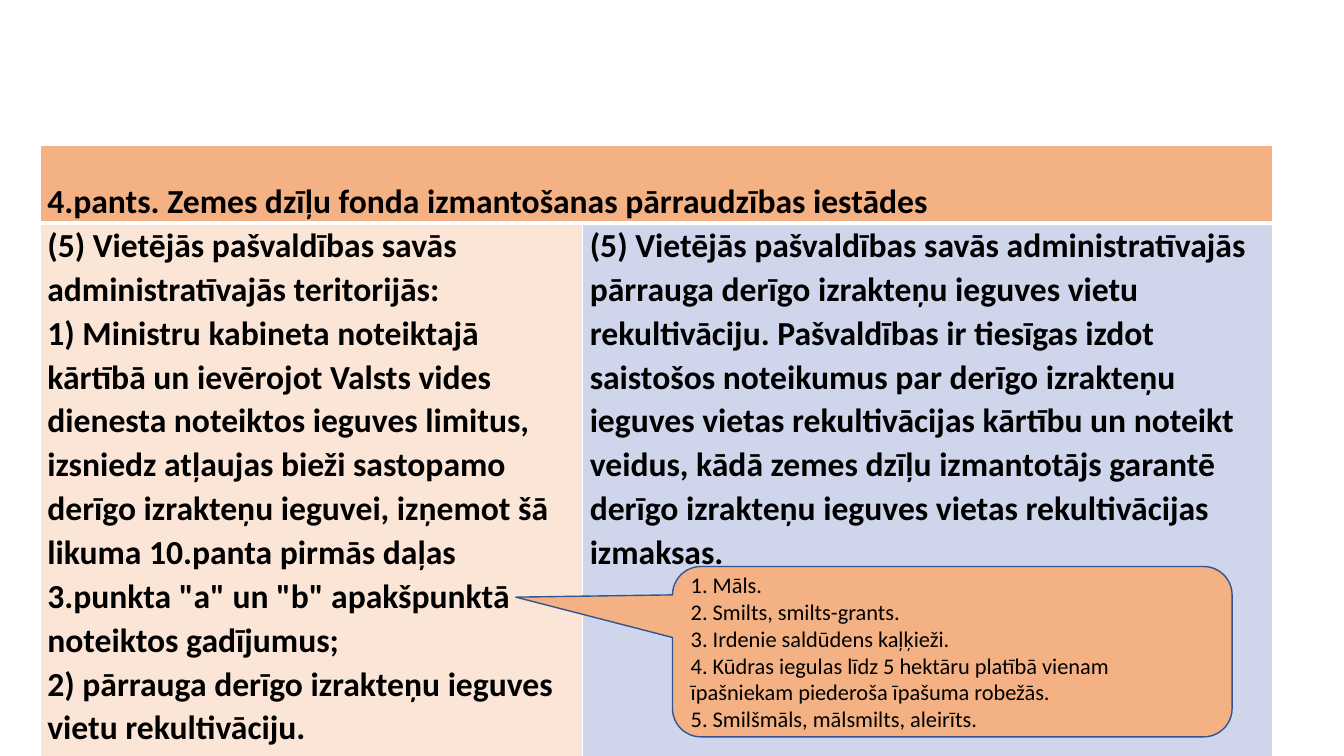
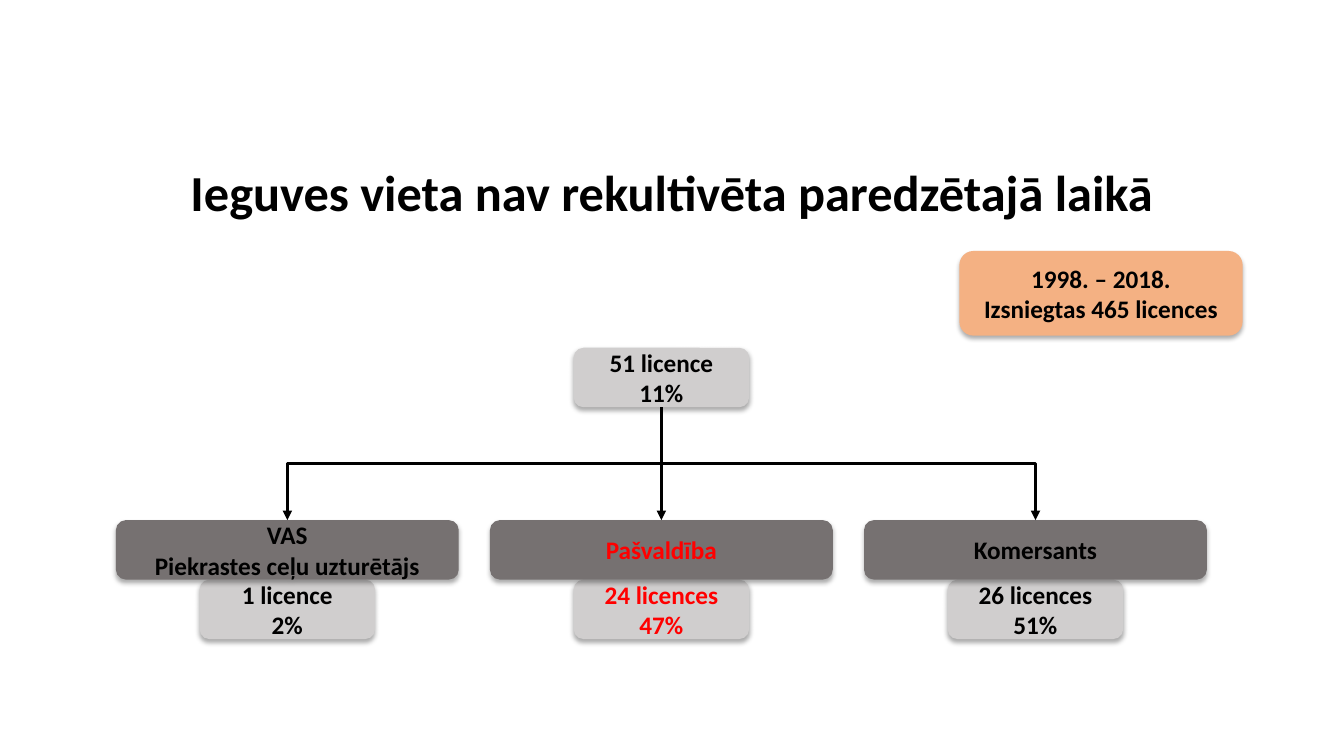
from lxml import etree
from pptx import Presentation
from pptx.dml.color import RGBColor
from pptx.enum.shapes import MSO_CONNECTOR as Link, MSO_SHAPE as Preset
from pptx.enum.text import MSO_ANCHOR as Anchor, PP_ALIGN as Align
from pptx.oxml.ns import qn
from pptx.util import Inches, Pt

FONT = "Calibri"
BLACK = RGBColor(0x00, 0x00, 0x00)
WHITE = RGBColor(0xFF, 0xFF, 0xFF)
RED = RGBColor(0xFF, 0x00, 0x00)
ORANGE = RGBColor(0xF4, 0xB1, 0x83)
PALE_ORANGE = RGBColor(0xFB, 0xE5, 0xD6)
PALE_BLUE = RGBColor(0xCF, 0xD5, 0xEA)
NAVY = RGBColor(0x32, 0x54, 0x91)
LIGHT_GRAY = RGBColor(0xD0, 0xCE, 0xCE)
DARK_GRAY = RGBColor(0x76, 0x71, 0x71)

ARTICLE = ["4.pants. Zemes dzīļu fonda izmantošanas pārraudzības iestādes"]
CURRENT_TEXT = [
    "(5) Vietējās pašvaldības savās administratīvajās teritorijās:",
    "1) Ministru kabineta noteiktajā kārtībā un ievērojot Valsts vides dienesta "
    "noteiktos ieguves limitus, izsniedz atļaujas bieži sastopamo derīgo izrakteņu "
    "ieguvei, izņemot šā likuma 10.panta pirmās daļas 3.punkta \"a\" un \"b\" "
    "apakšpunktā noteiktos gadījumus;",
    "2) pārrauga derīgo izrakteņu ieguves vietu rekultivāciju.",
]
NEW_TEXT = [
    "(5) Vietējās pašvaldības savās administratīvajās pārrauga derīgo izrakteņu "
    "ieguves vietu rekultivāciju. Pašvaldības ir tiesīgas izdot saistošos noteikumus "
    "par derīgo izrakteņu ieguves vietas rekultivācijas kārtību un noteikt veidus, "
    "kādā zemes dzīļu izmantotājs garantē derīgo izrakteņu ieguves vietas "
    "rekultivācijas izmaksas.",
]
MINERALS = [
    "1. Māls.",
    "2. Smilts, smilts-grants.",
    "3. Irdenie saldūdens kaļķieži.",
    "4. Kūdras iegulas līdz 5 hektāru platībā vienam īpašniekam piederoša īpašuma robežās.",
    "5. Smilšmāls, mālsmilts, aleirīts.",
]
COLUMN_WIDTHS = [5.38, 6.84]
ROW_HEIGHTS = [0.77, 9.81]

TITLE = ["Ieguves vieta nav rekultivēta paredzētajā laikā"]
ISSUED = ["1998. – 2018.", "Izsniegtas 465 licences"]
OVERDUE = ["51 licence", "11%"]
HOLDERS = [
    (["VAS", "Piekrastes ceļu uzturētājs"], ["1 licence", "2%"], BLACK),
    (["Pašvaldība"], ["24 licences", "47%"], RED),
    (["Komersants"], ["26 licences", "51%"], BLACK),
]
FIRST_CENTER, HOLDER_PITCH = 2.85, 3.71
HOLDER_WIDTH, COUNT_WIDTH, BOX_HEIGHT = 3.4, 1.74, 0.59
OVERDUE_TOP, HOLDER_TOP = 3.45, 5.16


def write(frame, lines, size, color=BLACK, bold=True, align=Align.LEFT, spacing=None):
    frame.word_wrap = True
    for i, line in enumerate(lines):
        paragraph = frame.paragraphs[0] if i == 0 else frame.add_paragraph()
        paragraph.alignment = align
        if spacing:
            paragraph.line_spacing = spacing
        run = paragraph.add_run()
        run.text = line
        font = run.font
        font.name, font.size, font.bold = FONT, Pt(size), bold
        font.color.rgb = color


def fill_cell(cell, lines, color, top=1, bottom=1, anchor=Anchor.TOP):
    cell.margin_left = cell.margin_right = Inches(0.07)
    cell.margin_top = cell.margin_bottom = 0
    cell.vertical_anchor = anchor
    properties = cell._tc.get_or_add_tcPr()
    for side, width in (("lnL", 1), ("lnR", 1), ("lnT", top), ("lnB", bottom)):
        border = etree.SubElement(properties, qn(f"a:{side}"), w=str(Pt(width)))
        solid = etree.SubElement(border, qn("a:solidFill"))
        etree.SubElement(solid, qn("a:srgbClr"), val=str(WHITE))
    cell.fill.solid()
    cell.fill.fore_color.rgb = color
    write(cell.text_frame, lines, 24, spacing=1.07)


def add_filled(slide, preset, left, top, width, height, color):
    shape = slide.shapes.add_shape(
        preset, Inches(left), Inches(top), Inches(width), Inches(height))
    shape.shadow.inherit = False
    shape.fill.solid()
    shape.fill.fore_color.rgb = color
    shape.text_frame.vertical_anchor = Anchor.MIDDLE
    return shape


def add_box(slide, center, top, width, height, color, lines, text_color=BLACK):
    """Rounded box with a soft shadow, centred on a given x."""
    box = add_filled(slide, Preset.ROUNDED_RECTANGLE,
                     center - width / 2, top, width, height, color)
    box.line.fill.background()
    effects = box._element.spPr.find(qn("a:effectLst"))
    shadow = etree.SubElement(
        effects, qn("a:outerShdw"), blurRad=str(Pt(3.5)), dist=str(Pt(2.2)),
        dir="5400000", algn="t", rotWithShape="0")
    shade = etree.SubElement(shadow, qn("a:srgbClr"), val=str(BLACK))
    etree.SubElement(shade, qn("a:alpha"), val="32000")
    write(box.text_frame, lines, 18, text_color, align=Align.CENTER)
    return box


def add_arrow(slide, source, target):
    """Arrow from the bottom of source to the top of target, bent if they are not aligned."""
    shift = (target.left + target.width // 2) - (source.left + source.width // 2)
    bent = abs(shift) > Inches(0.05)
    arrow = slide.shapes.add_connector(Link.ELBOW if bent else Link.STRAIGHT, 0, 0, 0, 0)
    arrow.begin_connect(source, 2)
    arrow.end_connect(target, 0)
    if bent:
        # Turn the elbow a quarter so that it leaves downwards.
        center_x = arrow.left + arrow.width // 2
        center_y = arrow.top + arrow.height // 2
        arrow.width, arrow.height = arrow.height, arrow.width
        arrow.left = center_x - arrow.width // 2
        arrow.top = center_y - arrow.height // 2
        frame = arrow._element.spPr.find(qn("a:xfrm"))
        frame.set("rot", "5400000" if shift < 0 else "16200000")
        frame.set("flipH", "0" if shift < 0 else "1")
    arrow.line.color.rgb = BLACK
    arrow.line.width = Pt(2.25)
    etree.SubElement(arrow.line._get_or_add_ln(), qn("a:tailEnd"), type="triangle")
    etree.SubElement(arrow._element.spPr, qn("a:effectLst"))


def build_law_slide(prs):
    slide = prs.slides.add_slide(prs.slide_layouts[6])
    table = slide.shapes.add_table(
        2, 2, Inches(0.4), Inches(1.44),
        Inches(sum(COLUMN_WIDTHS)), Inches(sum(ROW_HEIGHTS))).table
    table.first_row = table.horz_banding = False
    for column, width in zip(table.columns, COLUMN_WIDTHS):
        column.width = Inches(width)
    for row, height in zip(table.rows, ROW_HEIGHTS):
        row.height = Inches(height)
    table.cell(0, 0).merge(table.cell(0, 1))
    fill_cell(table.cell(0, 0), ARTICLE, ORANGE, bottom=3, anchor=Anchor.BOTTOM)
    fill_cell(table.cell(1, 0), CURRENT_TEXT, PALE_ORANGE, top=3)
    fill_cell(table.cell(1, 1), NEW_TEXT, PALE_BLUE, top=3)

    callout = add_filled(slide, Preset.ROUNDED_RECTANGULAR_CALLOUT,
                         6.67, 5.62, 5.55, 1.69, ORANGE)
    callout.adjustments[0] = -0.78
    callout.adjustments[1] = -0.32
    callout.line.color.rgb = NAVY
    callout.line.width = Pt(1)
    write(callout.text_frame, MINERALS, 16, bold=False)


def build_licence_slide(prs):
    slide = prs.slides.add_slide(prs.slide_layouts[0])
    subtitle = slide.placeholders[1]._element
    subtitle.getparent().remove(subtitle)
    title = slide.shapes.title
    title.left, title.top = Inches(1), Inches(1.13)
    title.width, title.height = Inches(11.33), Inches(1.61)
    title.text_frame.vertical_anchor = Anchor.MIDDLE
    write(title.text_frame, TITLE, 36, align=Align.CENTER, spacing=0.9)

    add_box(slide, 10.92, 2.49, 2.81, 0.84, ORANGE, ISSUED)
    overdue = add_box(slide, FIRST_CENTER + HOLDER_PITCH, OVERDUE_TOP,
                      COUNT_WIDTH, BOX_HEIGHT, LIGHT_GRAY, OVERDUE)
    for i, (holder, count, color) in enumerate(HOLDERS):
        center = FIRST_CENTER + i * HOLDER_PITCH
        add_box(slide, center, HOLDER_TOP + BOX_HEIGHT, COUNT_WIDTH, BOX_HEIGHT,
                LIGHT_GRAY, count, color)
        holder_box = add_box(slide, center, HOLDER_TOP, HOLDER_WIDTH, BOX_HEIGHT,
                             DARK_GRAY, holder, color)
        add_arrow(slide, overdue, holder_box)


def main():
    prs = Presentation()
    prs.slide_width, prs.slide_height = Inches(13.33), Inches(7.5)
    build_law_slide(prs)
    build_licence_slide(prs)
    prs.save("out.pptx")


if __name__ == "__main__":
    main()
